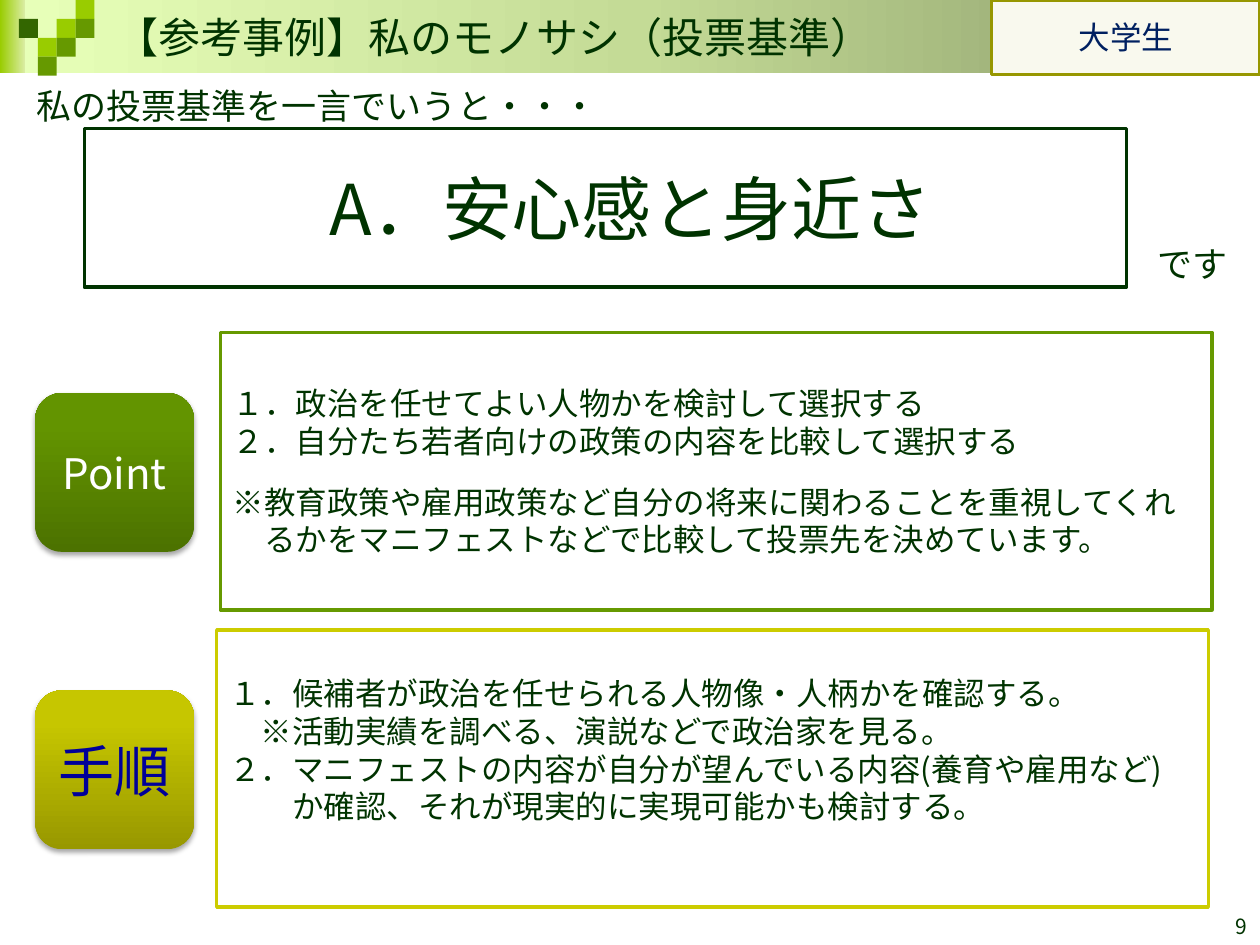
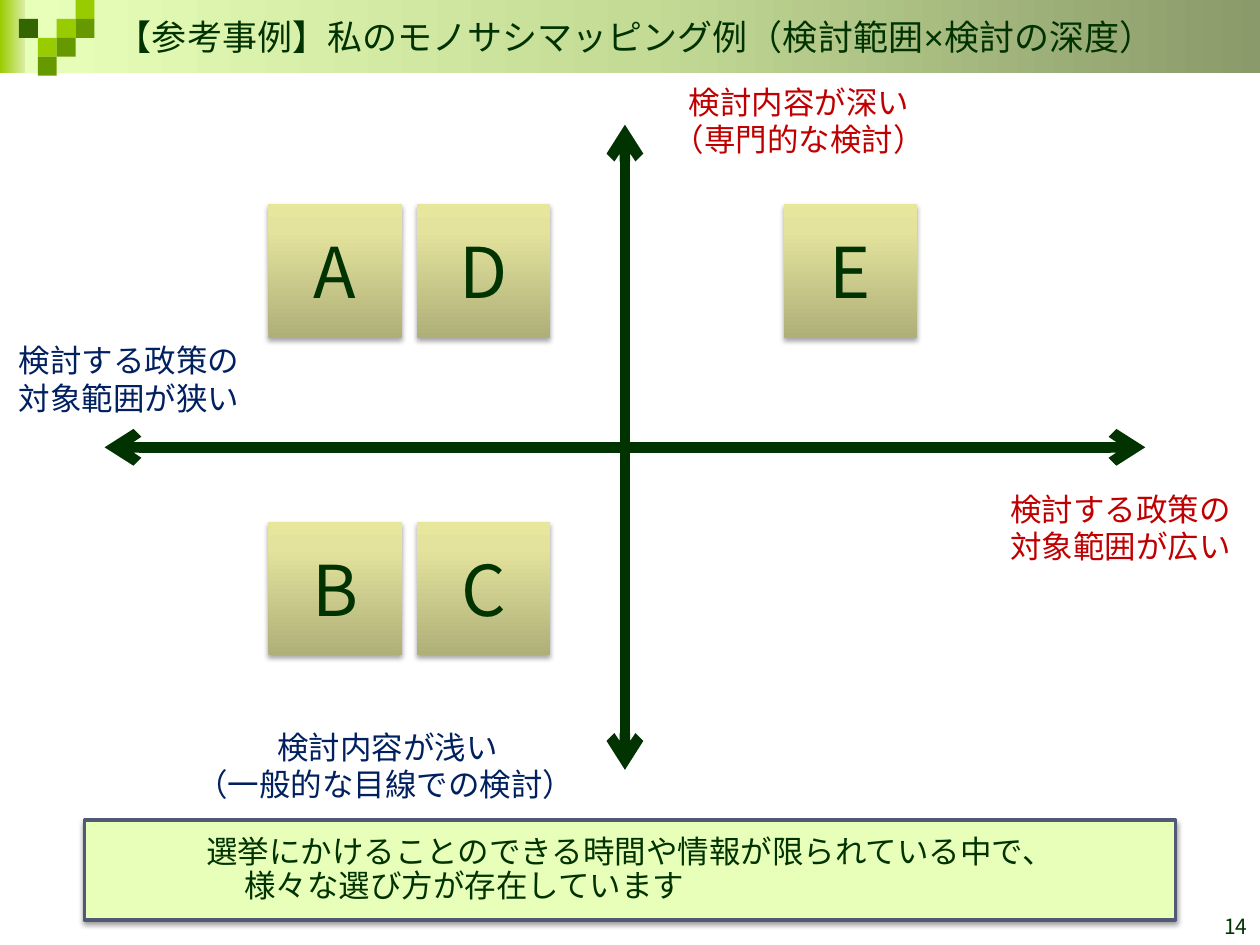
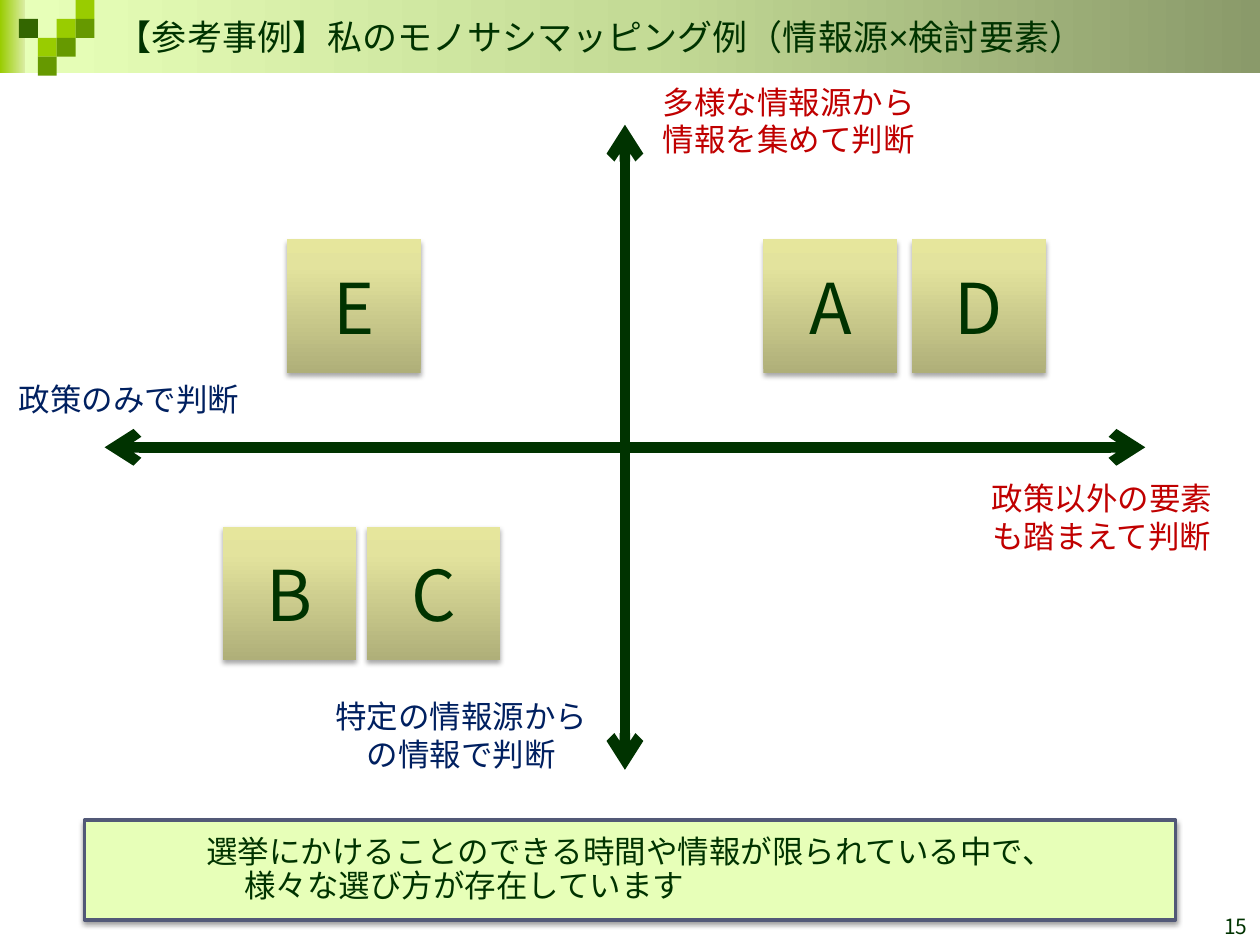
from dataclasses import dataclass, field
from typing import Any, NamedTuple, Optional

import lxml.etree
import pptx
import pptx.dml.color
import pptx.enum.shapes
import pptx.enum.text
import pptx.oxml.ns
import pptx.shapes.autoshape
import pptx.slide
import pptx.util

Inches = pptx.util.Inches
Pt = pptx.util.Pt
RGB = pptx.dml.color.RGBColor
Shape = pptx.shapes.autoshape.Shape
Slide = pptx.slide.Slide
qn = pptx.oxml.ns.qn
SHAPE = pptx.enum.shapes.MSO_SHAPE
ALIGN = pptx.enum.text.PP_ALIGN
ANCHOR = pptx.enum.text.MSO_ANCHOR

FONT = "Noto Sans CJK JP"
TITLE_FONT = "Arial"

INK = RGB(0x00, 0x33, 0x00)
WHITE = RGB(0xFF, 0xFF, 0xFF)
NAVY = RGB(0x00, 0x20, 0x60)
BLUE = RGB(0x00, 0x00, 0x99)
RED = RGB(0xC0, 0x00, 0x00)
LIME = RGB(0x99, 0xCC, 0x00)
GREEN = RGB(0x66, 0x99, 0x00)
DARK_GREEN = RGB(0x33, 0x66, 0x00)
YELLOW = RGB(0xCC, 0xCC, 0x00)
PALE_LIME = RGB(0xE7, 0xFF, 0xB8)
BAND_MID = RGB(0xC4, 0xDB, 0x96)
BAND_DARK = RGB(0x8A, 0x9A, 0x6A)
SLATE = RGB(0x52, 0x59, 0x77)
OLIVE = RGB(0x97, 0x97, 0x00)
CREAM = RGB(0xF9, 0xF9, 0xEE)
BLACK = RGB(0x00, 0x00, 0x00)


class Box(NamedTuple):
    x: float
    y: float
    w: float
    h: float


class Gradient(NamedTuple):
    stops: tuple[tuple[int, RGB], ...]
    angle: int


class Shadow(NamedTuple):
    alpha: int
    blur: float
    dist: float


class Para(NamedTuple):
    text: str
    align: ALIGN = ALIGN.LEFT
    left: float = 0
    first: float = 0
    before: float = 0
    spacing: Optional[float] = None


@dataclass
class Style:
    size: float = 18
    color: RGB = INK
    font: str = FONT
    frame: dict[str, Any] = field(default_factory=dict)


@dataclass
class Look:
    fill: RGB | Gradient | None = None
    line: Optional[RGB] = None
    shadow: Optional[Shadow] = None
    preset: SHAPE = SHAPE.RECTANGLE


class Label(NamedTuple):
    box: Box
    color: RGB
    paras: list[Para]


class Card(NamedTuple):
    letter: str
    x: float
    y: float


class Mapping(NamedTuple):
    title: str
    page: int
    labels: list[Label]
    cards: list[Card]


def vertical(bottom: RGB, upper: RGB, top: RGB) -> Gradient:
    return Gradient(((0, bottom), (80, upper), (100, top)), 90)


SOFT = Shadow(35, 3.1, 1.8)
CARD = Look(vertical(RGB(0xAF, 0xAF, 0x79), RGB(0xE3, 0xE3, 0x9D), RGB(0xE6, 0xE6, 0x9C)), shadow=SOFT)
POINT = Look(vertical(RGB(0x4C, 0x72, 0x00), RGB(0x63, 0x94, 0x00), RGB(0x63, 0x95, 0x00)),
             shadow=SOFT, preset=SHAPE.ROUNDED_RECTANGLE)
STEPS = Look(vertical(RGB(0x98, 0x98, 0x00), RGB(0xC6, 0xC6, 0x00), RGB(0xC7, 0xC7, 0x00)),
             shadow=SOFT, preset=SHAPE.ROUNDED_RECTANGLE)
NOTE = Look(PALE_LIME, SLATE, Shadow(38, 3.1, 1.6))
BAND_START = Gradient(((0, LIME), (100, WHITE)), 0)
BAND = Gradient(((0, BAND_DARK), (50, BAND_MID), (100, PALE_LIME)), 180)

TILE = 0.15
TILES = [(3, 1, LIME), (4, 0, LIME), (4, 1, GREEN), (2, 2, LIME),
         (1, 1, DARK_GREEN), (3, 2, GREEN), (2, 3, GREEN)]
CARD_SIZE = 1.06
AXES = [(0.83, 3.55, 9.09, 3.55), (4.96, 0.99, 4.96, 6.11)]


def assign(obj: Any, values: dict[str, Any]) -> None:
    for name, value in values.items():
        setattr(obj, name, value)


def add_color(parent: Any, color: RGB, alpha: Optional[int] = None) -> None:
    clr = lxml.etree.SubElement(parent, qn("a:srgbClr"), val=str(color))
    if alpha is not None:
        lxml.etree.SubElement(clr, qn("a:alpha"), val=str(alpha * 1000))


def set_gradient(sp: Shape, gradient: Gradient) -> None:
    sp.fill.gradient()
    sp.fill.gradient_angle = gradient.angle
    stops = sp._element.spPr.find(".//" + qn("a:gsLst"))
    for stop in list(stops):
        stops.remove(stop)
    for position, color in gradient.stops:
        add_color(lxml.etree.SubElement(stops, qn("a:gs"), pos=str(position * 1000)), color)


def set_shadow(sp: Shape, shadow: Shadow) -> None:
    effects = sp._element.spPr.find(qn("a:effectLst"))
    outer = lxml.etree.SubElement(effects, qn("a:outerShdw"), blurRad=str(Pt(shadow.blur)),
                                  dist=str(Pt(shadow.dist)), dir="5400000", rotWithShape="0")
    add_color(outer, BLACK, shadow.alpha)


def write(sp: Shape, paras: list[Para], style: Style) -> None:
    tf = sp.text_frame
    assign(tf, {"word_wrap": True, "vertical_anchor": ANCHOR.MIDDLE} | style.frame)
    for i, para in enumerate(paras):
        p = tf.paragraphs[0] if i == 0 else tf.add_paragraph()
        assign(p, {"alignment": para.align, "space_before": Pt(para.before),
                   "line_spacing": para.spacing})
        pPr = p._p.get_or_add_pPr()
        pPr.set("marL", str(Inches(para.left)))
        pPr.set("indent", str(Inches(para.first)))
        r = p.add_run()
        r.text = para.text
        assign(r.font, {"size": Pt(style.size), "name": style.font})
        r.font.color.rgb = style.color
        lxml.etree.SubElement(r._r.get_or_add_rPr(), qn("a:ea"), typeface=FONT)


def add_text(s: Slide, box: Box, paras: list[Para], style: Style) -> None:
    write(s.shapes.add_textbox(*map(Inches, box)), paras, style)


def add_shape(s: Slide, box: Box, look: Look, paras: Optional[list[Para]] = None,
              style: Optional[Style] = None) -> None:
    sp = s.shapes.add_shape(look.preset, *map(Inches, box))
    sp.shadow.inherit = False
    if isinstance(look.fill, Gradient):
        set_gradient(sp, look.fill)
    else:
        sp.fill.solid()
        sp.fill.fore_color.rgb = look.fill
    if look.line is None:
        sp.line.fill.background()
    else:
        sp.line.color.rgb = look.line
        sp.line.width = Pt(2)
    if look.shadow:
        set_shadow(sp, look.shadow)
    if paras:
        write(sp, paras, style or Style())


def centred(*texts: str) -> list[Para]:
    return [Para(text, ALIGN.CENTER) for text in texts]


def add_page(prs: Any, page: int) -> Slide:
    s = prs.slides.add_slide(prs.slide_layouts[6])
    add_shape(s, Box(0, 0, 0.31, 0.58), Look(BAND_START))
    add_shape(s, Box(0.2, 0, 9.8, 0.58), Look(BAND))
    for col, row, color in TILES:
        add_shape(s, Box(col * TILE, row * TILE, TILE, TILE), Look(color))
    add_text(s, Box(7.67, 7, 2.33, 0.5), [Para(str(page), ALIGN.RIGHT)],
             Style(12, frame={"vertical_anchor": ANCHOR.BOTTOM}))
    return s


def add_title(s: Slide, text: str, size: float, box: Box) -> None:
    add_text(s, box, [Para(text)], Style(size, font=TITLE_FONT))


def add_axis(s: Slide, ends: tuple[float, ...]) -> None:
    line = s.shapes.add_connector(pptx.enum.shapes.MSO_CONNECTOR.STRAIGHT, *map(Inches, ends))
    line.line.color.rgb = INK
    line.line.width = Pt(6)
    for end in ("a:headEnd", "a:tailEnd"):
        lxml.etree.SubElement(line.line._get_or_add_ln(), qn(end), type="arrow")
    lxml.etree.SubElement(line._element.spPr, qn("a:effectLst"))


def add_example(prs: Any) -> None:
    s = add_page(prs, 9)
    add_text(s, Box(0, 0.6, 7.28, 0.47),
             [Para("私の投票基準を一言でいうと・・・", first=0.19)], Style(20))
    add_shape(s, Box(0.67, 1.02, 8.27, 1.26), Look(WHITE, INK),
              [Para("A．安心感と身近さ", ALIGN.CENTER, first=0.4)], Style(40))
    add_text(s, Box(8.9, 1.86, 0.98, 0.47), [Para("です", first=0.19)], Style(20))
    add_shape(s, Box(0.28, 5.48, 1.26, 1.26), STEPS, centred("手順"), Style(32, BLUE))
    add_shape(s, Box(1.75, 2.64, 7.87, 2.2), Look(WHITE, GREEN), [
        Para("１．政治を任せてよい人物かを検討して選択する"),
        Para("２．自分たち若者向けの政策の内容を比較して選択する"),
        Para("※教育政策や雇用政策など自分の将来に関わることを重視してくれ", before=13),
        Para("るかをマニフェストなどで比較して投票先を決めています。", left=0.25),
    ])
    add_shape(s, Box(1.72, 5, 7.87, 2.2), Look(WHITE, YELLOW), [
        Para("１．候補者が政治を任せられる人物像・人柄かを確認する。"),
        Para("※活動実績を調べる、演説などで政治家を見る。", left=0.25),
        Para("２．マニフェストの内容が自分が望んでいる内容(養育や雇用など)"),
        Para("か確認、それが現実的に実現可能かも検討する。", left=0.5),
    ], Style(frame={"margin_bottom": Inches(0.35)}))
    add_shape(s, Box(0.28, 3.12, 1.26, 1.26), POINT, centred("Point"), Style(24, WHITE))
    add_shape(s, Box(7.87, 0, 2.13, 0.59), Look(CREAM, OLIVE), centred("大学生"), Style(18, NAVY))
    add_title(s, "【参考事例】私のモノサシ（投票基準）", 24, Box(0.83, 0.04, 8.66, 0.5))


def add_mapping(prs: Any, mapping: Mapping) -> None:
    s = add_page(prs, mapping.page)
    for ends in AXES:
        add_axis(s, ends)
    for label in mapping.labels:
        add_text(s, label.box, label.paras, Style(color=label.color))
    for card in mapping.cards:
        add_shape(s, Box(card.x, card.y, CARD_SIZE, CARD_SIZE), CARD,
                  centred(card.letter), Style(40))
    add_title(s, mapping.title, 20, Box(0.83, 0.07, 8.66, 0.44))
    add_shape(s, Box(0.67, 6.51, 8.66, 0.79), NOTE, [
        Para("選挙にかけることのできる時間や情報が限られている中で、", ALIGN.CENTER, spacing=0.9),
        Para("様々な選び方が存在しています", left=1.37, first=-0.2, spacing=0.9),
    ])


MAPPINGS = [
    Mapping(
        "【参考事例】私のモノサシマッピング例（検討範囲×検討の深度）", 14,
        [
            Label(Box(7.83, 3.83, 2.13, 0.71), RED, centred("検討する政策の対象範囲が広い")),
            Label(Box(-0.04, 2.65, 2.13, 0.71), NAVY, centred("検討する政策の対象範囲が狭い")),
            Label(Box(1.46, 5.72, 3.23, 0.71), NAVY,
                  centred("検討内容が浅い") + [Para("（一般的な目線での検討）")]),
            Label(Box(5.08, 0.6, 2.52, 0.71), RED, centred("検討内容が深い", "（専門的な検討）")),
        ],
        [Card("A", 2.13, 1.62), Card("B", 2.13, 4.14), Card("E", 6.22, 1.62),
         Card("D", 3.31, 1.62), Card("C", 3.31, 4.14)],
    ),
    Mapping(
        "【参考事例】私のモノサシマッピング例（情報源×検討要素）", 15,
        [
            Label(Box(7.68, 3.75, 2.13, 0.71), RED, centred("政策以外の要素も踏まえて判断")),
            Label(Box(-0.04, 2.81, 2.13, 0.71), NAVY, centred("政策のみで判断")),
            Label(Box(2.48, 5.48, 2.36, 0.71), NAVY, centred("特定の情報源からの情報で判断")),
            Label(Box(5.08, 0.6, 2.36, 0.71), RED, centred("多様な情報源から情報を集めて判断")),
        ],
        [Card("E", 2.28, 1.9), Card("B", 1.77, 4.18), Card("A", 6.06, 1.9),
         Card("D", 7.24, 1.9), Card("C", 2.91, 4.18)],
    ),
]


def main() -> None:
    prs = pptx.Presentation()
    assign(prs, {"slide_width": Inches(10), "slide_height": Inches(7.5)})
    add_example(prs)
    for mapping in MAPPINGS:
        add_mapping(prs, mapping)
    prs.save("out.pptx")


if __name__ == "__main__":
    main()
